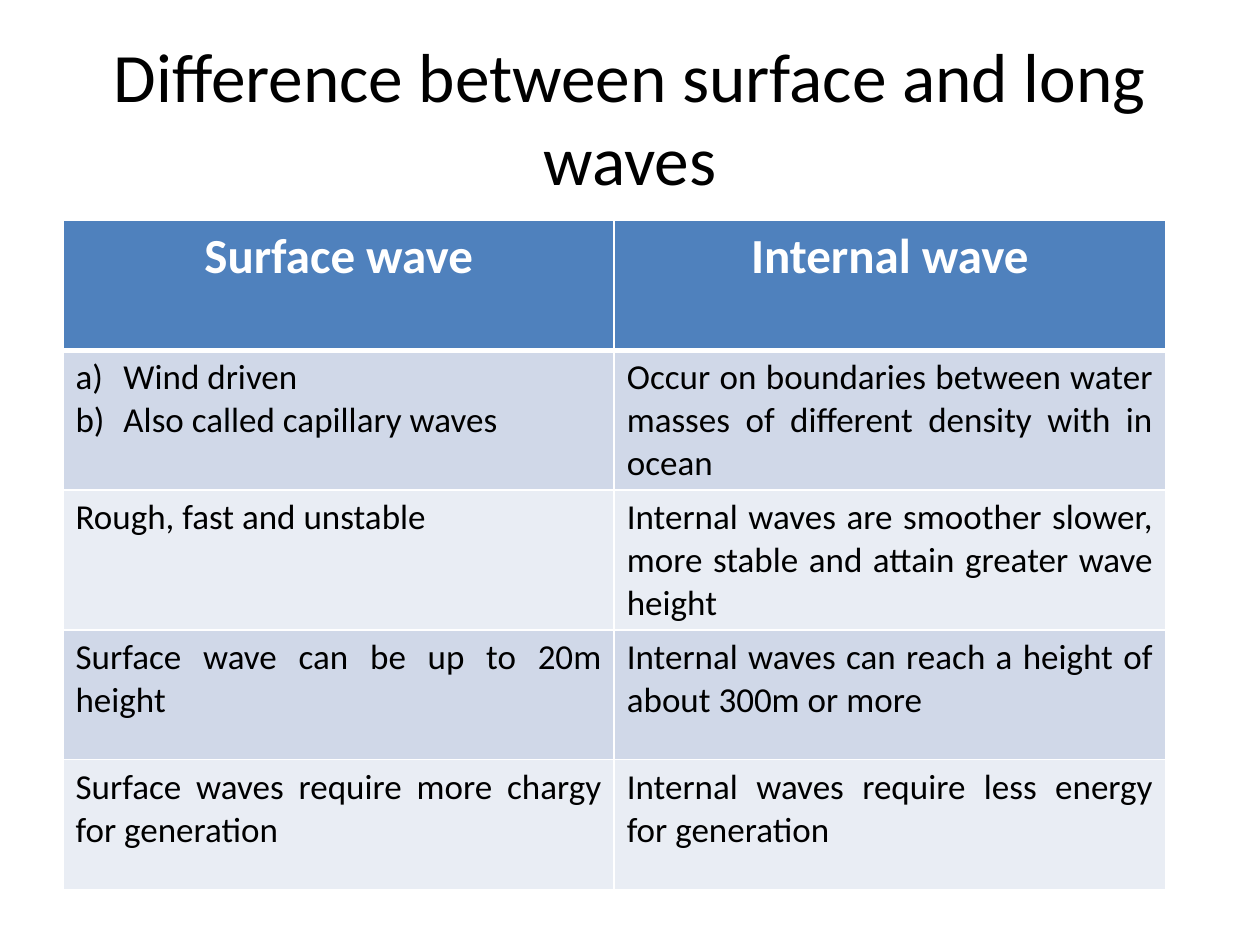
from dataclasses import dataclass

from lxml.etree import SubElement as Sub
from pptx import Presentation
from pptx.dml.color import RGBColor as Rgb
from pptx.enum.text import MSO_ANCHOR as Anchor, PP_ALIGN as Align
from pptx.oxml import parse_xml
from pptx.oxml.ns import nsdecls, qn
from pptx.util import Inches, Pt

HUES = {"ink": "000000", "white": "FFFFFF", "head": "4F81BD",
        "odd": "D0D8E8", "even": "E9EDF4"}
FONT = "Calibri"
WIDE, HIGH = Inches(10), Inches(7.5)
EDGE = 0.05  # left margin as a share of the slide's width


@dataclass
class Style:
    size: float
    hue: str
    align: Align
    bold: bool = False


TITLE = Style(39.6, "ink", Align.CENTER)
HEAD = Style(28, "white", Align.CENTER, True)
BODY = Style(20, "ink", Align.JUSTIFY)


@dataclass
class Row:
    high: float
    left: str
    right: str
    listed: bool = False  # the left cell is lettered a), b)


ROWS = [
    Row(1.03, "Surface wave", "Internal wave"),
    Row(1.11, "Wind driven\nAlso called capillary waves",
        "Occur on boundaries between water masses of different density with in ocean", True),
    Row(1.11, "Rough, fast and unstable",
        "Internal waves are smoother slower, more stable and attain greater wave height"),
    Row(1.03, "Surface wave can be up to 20m height",
        "Internal waves can reach a height of about 300m or more"),
    Row(1.03, "Surface waves require more chargy for generation",
        "Internal waves require less energy for generation"),
]


def write(frame, text: str, style: Style) -> None:
    frame.text = text
    for para in frame.paragraphs:
        para.alignment = style.align
        font = para.font
        font.name, font.size, font.bold = FONT, Pt(style.size), style.bold
        font.color.rgb = Rgb.from_string(HUES[style.hue])


def letter(frame) -> None:
    """Number the paragraphs a), b) with a hanging indent."""
    for para in frame.paragraphs:
        props = para._p.get_or_add_pPr()
        props.set("marL", str(Inches(0.38)))
        props.set("indent", str(-Inches(0.38)))
        mark = Sub(props, qn("a:buAutoNum"), type="alphaLcParenR")
        props.find(qn("a:defRPr")).addprevious(mark)


def rule(cell, top: int, base: int) -> None:
    """Draw white borders, with widths in points."""
    props = cell._tc.get_or_add_tcPr()
    sides = {"lnL": 1, "lnR": 1, "lnT": top, "lnB": base}
    for spot, (side, width) in enumerate(sides.items()):
        props.insert(spot, parse_xml(
            f'<a:{side} {nsdecls("a")} w="{Pt(width)}"><a:solidFill>'
            f'<a:srgbClr val="{HUES["white"]}"/></a:solidFill></a:{side}>'))


def draw_title(slide, text: str) -> None:
    box = slide.shapes.add_textbox(int(WIDE * EDGE), int(HIGH * 0.04),
                                   int(WIDE * 0.9), int(HIGH / 6))
    frame = box.text_frame
    frame.word_wrap = True
    frame.vertical_anchor = Anchor.MIDDLE
    write(frame, text, TITLE)


def draw_table(slide, rows: list[Row]) -> None:
    high = Inches(sum(row.high for row in rows))
    table = slide.shapes.add_table(len(rows), 2, int(WIDE * EDGE), Inches(1.75),
                                   int(WIDE * 0.875), high).table
    for i, row in enumerate(rows):
        table.rows[i].height = Inches(row.high)
        hue = "head" if i == 0 else "odd" if i % 2 else "even"
        for j, text in enumerate((row.left, row.right)):
            cell = table.cell(i, j)
            cell.fill.solid()
            cell.fill.fore_color.rgb = Rgb.from_string(HUES[hue])
            # A thick line parts the header from the body
            rule(cell, 3 if i == 1 else 1, 3 if i == 0 else 1)
            write(cell.text_frame, text, BODY if i else HEAD)
            if row.listed and j == 0:
                letter(cell.text_frame)


def main() -> None:
    deck = Presentation()
    deck.slide_width, deck.slide_height = WIDE, HIGH
    slide = deck.slides.add_slide(deck.slide_layouts[6])
    draw_title(slide, "Difference between surface and long waves")
    draw_table(slide, ROWS)
    deck.save("out.pptx")


if __name__ == "__main__":
    main()
